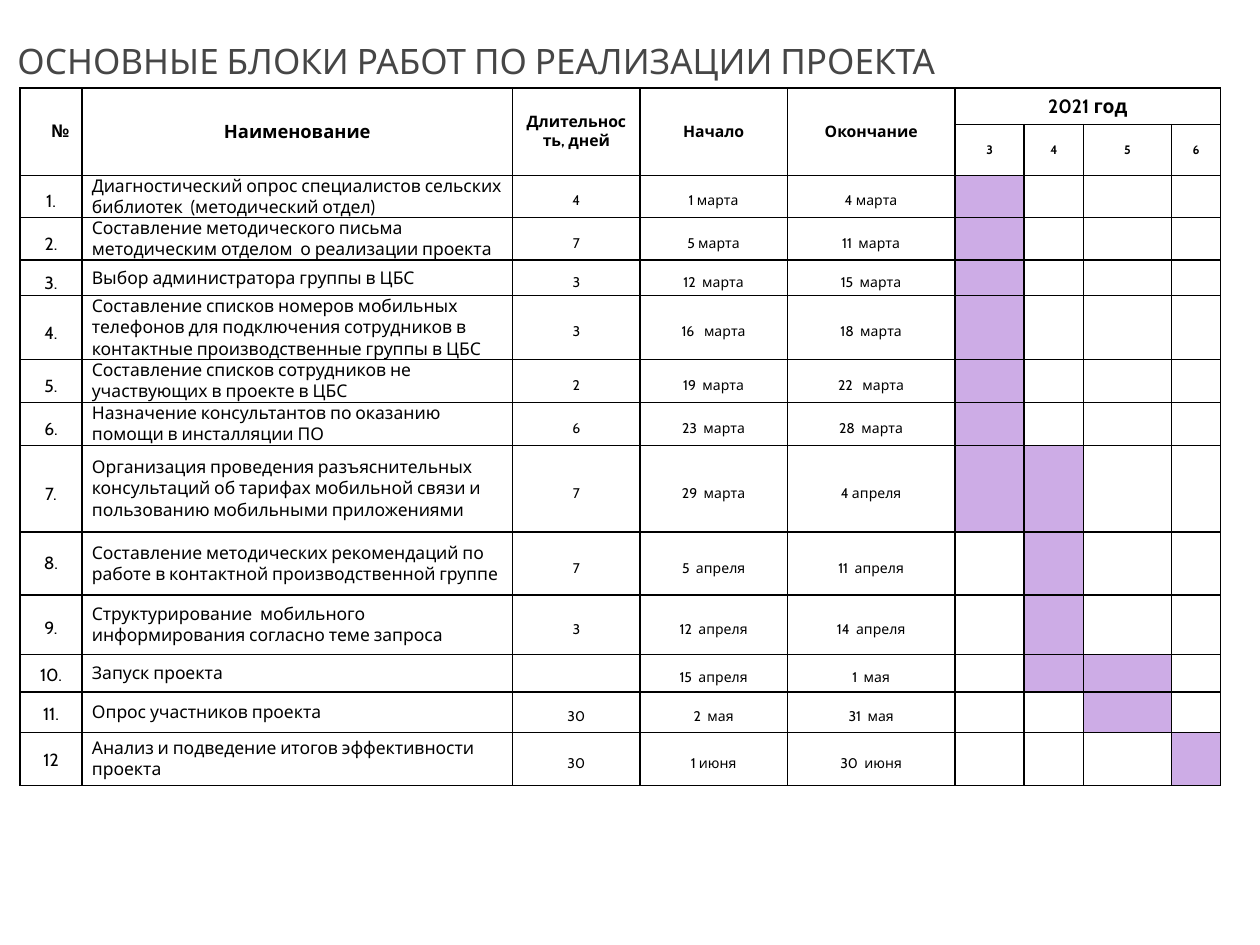
from lxml import etree
from pptx import Presentation
from pptx.dml.color import RGBColor
from pptx.enum.text import MSO_ANCHOR, PP_ALIGN
from pptx.oxml.ns import qn
from pptx.util import Inches, Pt

LEFT, CENTER, RIGHT = PP_ALIGN.LEFT, PP_ALIGN.CENTER, PP_ALIGN.RIGHT
MIDDLE = MSO_ANCHOR.MIDDLE

COLUMN_WIDTHS = [0.49, 3.42, 1.01, 1.17, 1.33, 0.55, 0.47, 0.7, 0.39]
ROW_HEIGHTS = [0.29, 0.4, 0.33, 0.34, 0.28, 0.51, 0.34, 0.34, 0.69, 0.5, 0.47, 0.3, 0.32, 0.42]
HEADERS = [("№", 10, RIGHT), ("Наименование", 10.5, CENTER), ("Длительность, дней", 9, CENTER),
           ("Начало", 9, CENTER), ("Окончание", 9, CENTER)]
MONTHS = {"марта": 3, "апреля": 4, "мая": 5, "июня": 6}
FIRST_MONTH_COLUMN = len(HEADERS)
FIRST_TASK_ROW = 2
TASKS = [
    ("1.", "Диагностический опрос специалистов сельских библиотек  (методический отдел)",
     "4", "1 марта", "4 марта"),
    ("2.", "Составление методического письма  методическим отделом  о реализации проекта",
     "7", "5 марта", "11  марта"),
    ("3.", "Выбор администратора группы в ЦБС", "3", "12  марта", "15  марта"),
    ("4.", "Составление списков номеров мобильных телефонов для подключения сотрудников "
           "в контактные производственные группы в ЦБС", "3", "16   марта", "18  марта"),
    ("5.", "Составление списков сотрудников не участвующих в проекте в ЦБС",
     "2", "19  марта", "22   марта"),
    ("6.", "Назначение консультантов по оказанию помощи в инсталляции ПО",
     "6", "23  марта", "28  марта"),
    ("7.", "Организация проведения разъяснительных  консультаций об тарифах мобильной связи "
           "и пользованию мобильными приложениями", "7", "29  марта", "4 апреля"),
    ("8.", "Составление методических рекомендаций по работе в контактной производственной группе",
     "7", "5  апреля", "11  апреля"),
    ("9.", "Структурирование  мобильного информирования согласно теме запроса",
     "3", "12  апреля", "14  апреля"),
    ("10.", "Запуск проекта", "", "15  апреля", "1  мая"),
    ("11.", "Опрос участников проекта", "30", "2  мая", "31  мая"),
    ("12", "Анализ и подведение итогов эффективности проекта", "30", "1 июня", "30  июня"),
]
NUMBER_SPACING = [1.5] * 7 + [1.0, Pt(16.6)] + [1.15] * 3


def color(value):
    return RGBColor.from_string(value)


class ScheduleSlide:
    """Holds the schedule style and draws elements on one slide."""

    font = "Cabin"
    ink = "000000"
    title_ink = "464646"
    paper = "FFFFFF"
    bar = "CDACE6"

    def __init__(self, slide):
        self.slide = slide

    def add_run(self, paragraph, text, size, ink, bold=False):
        run = paragraph.add_run()
        run.text = text
        run.font.name = self.font
        run.font.size = Pt(size)
        run.font.bold = bold
        run.font.color.rgb = color(ink)

    def add_title(self, text, left, top, width, height):
        shape = self.slide.shapes.add_textbox(Inches(left), Inches(top), Inches(width), Inches(height))
        frame = shape.text_frame
        frame.word_wrap = True
        frame.vertical_anchor = MIDDLE
        self.add_run(frame.paragraphs[0], text, 20, self.title_ink)

    def add_table(self, left, top):
        shape = self.slide.shapes.add_table(
            len(ROW_HEIGHTS), len(COLUMN_WIDTHS), Inches(left), Inches(top),
            Inches(sum(COLUMN_WIDTHS)), Inches(sum(ROW_HEIGHTS)))
        table = shape.table
        for column, width in zip(table.columns, COLUMN_WIDTHS):
            column.width = Inches(width)
        for row, height in zip(table.rows, ROW_HEIGHTS):
            row.height = Inches(height)
        for cell in table.iter_cells():
            self.style_cell(cell)
        return table

    def style_cell(self, cell):
        properties = cell._tc.get_or_add_tcPr()
        for side in ("a:lnL", "a:lnR", "a:lnT", "a:lnB"):
            line = etree.SubElement(properties, qn(side), w=str(Pt(1)))
            fill = etree.SubElement(line, qn("a:solidFill"))
            etree.SubElement(fill, qn("a:srgbClr"), val=self.ink)
        self.fill_cell(cell, self.paper)
        cell.vertical_anchor = MIDDLE
        self.set_margins(cell, 0.08, 0)
        cell.text_frame.paragraphs[0]._p.get_or_add_endParaRPr().set("sz", "800")

    def fill_cell(self, cell, value):
        cell.fill.solid()
        cell.fill.fore_color.rgb = color(value)

    def set_margins(self, cell, side, end):
        cell.margin_left = cell.margin_right = Inches(side)
        cell.margin_top = cell.margin_bottom = Inches(end)

    def write_cell(self, cell, text, size, align=CENTER, spacing=None, bold=False):
        paragraph = cell.text_frame.paragraphs[0]
        paragraph.alignment = align
        paragraph.line_spacing = spacing
        if text:
            self.add_run(paragraph, text, size, self.ink, bold)

    def write_header(self, cell, text, size, align=CENTER, side=0.1):
        self.set_margins(cell, side, 0.05)
        self.write_cell(cell, text, size, align, bold=True)

    def fill_headers(self, table):
        for column, (text, size, align) in enumerate(HEADERS):
            cell = table.cell(0, column)
            cell.merge(table.cell(1, column))
            self.write_header(cell, text, size, align)
        year = table.cell(0, FIRST_MONTH_COLUMN)
        year.merge(table.cell(0, len(COLUMN_WIDTHS) - 1))
        self.write_header(year, "2021 год", 11)
        for column, month in enumerate(MONTHS.values(), FIRST_MONTH_COLUMN):
            self.write_header(table.cell(1, column), str(month), 7, side=0.04)

    def fill_task(self, table, row, task, number_spacing):
        number, name, days, start, finish = task
        self.write_cell(table.cell(row, 0), number, 10, spacing=number_spacing)
        self.write_cell(table.cell(row, 1), name, 10, LEFT)
        for column, text in enumerate((days, start, finish), 2):
            self.write_cell(table.cell(row, column), text, 8, spacing=1.5)
        first, last = (MONTHS[date.split()[1]] for date in (start, finish))
        for column, month in enumerate(MONTHS.values(), FIRST_MONTH_COLUMN):
            if first <= month <= last:
                self.fill_cell(table.cell(row, column), self.bar)


def main():
    presentation = Presentation()
    presentation.slide_width = Inches(10)
    presentation.slide_height = Inches(7.5)
    schedule = ScheduleSlide(presentation.slides.add_slide(presentation.slide_layouts[6]))
    schedule.add_title("ОСНОВНЫЕ БЛОКИ РАБОТ ПО РЕАЛИЗАЦИИ ПРОЕКТА", 0.04, 0.1, 8.58, 0.76)
    table = schedule.add_table(0.16, 0.7)
    schedule.fill_headers(table)
    for row, (task, spacing) in enumerate(zip(TASKS, NUMBER_SPACING), FIRST_TASK_ROW):
        schedule.fill_task(table, row, task, spacing)
    presentation.save("out.pptx")


if __name__ == "__main__":
    main()
